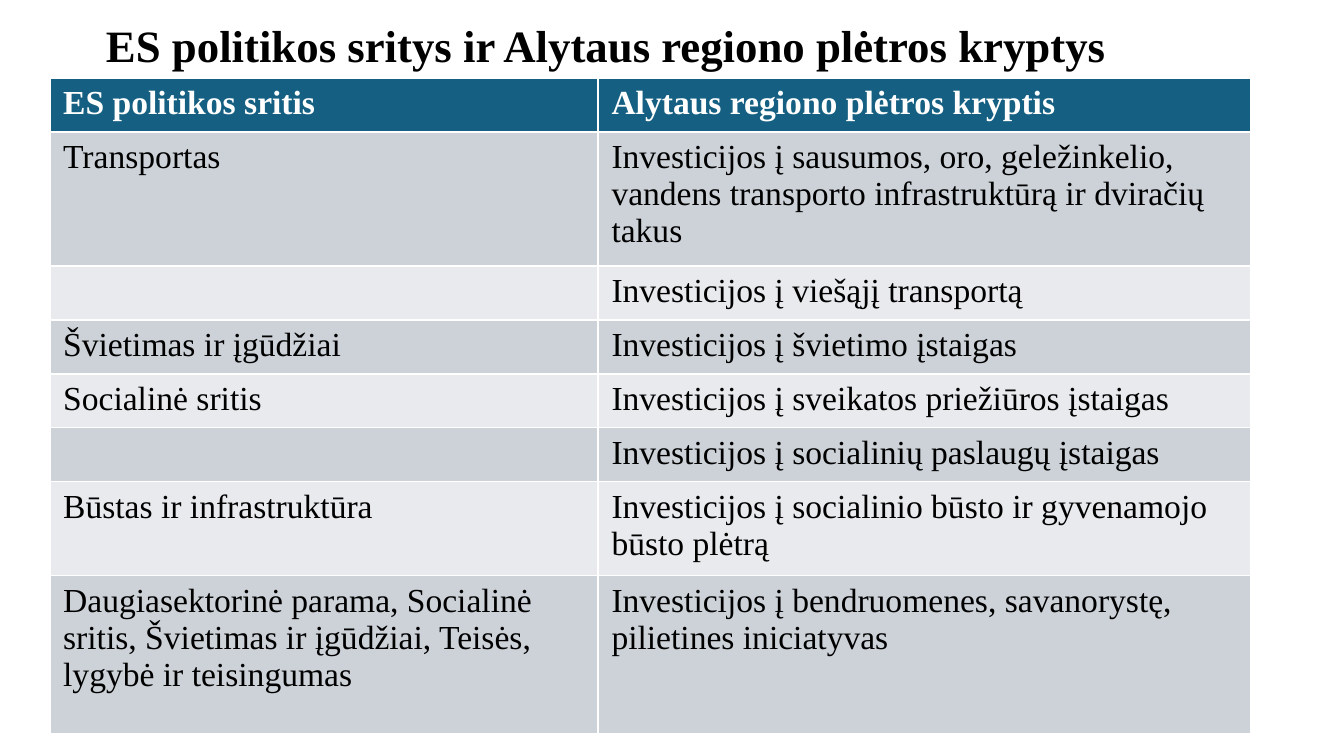
"""Build a slide with a table of EU policy areas and Alytus region development directions."""
from dataclasses import dataclass

from pptx import Presentation
from pptx.dml.color import RGBColor as Color
from pptx.enum.text import MSO_ANCHOR as Anchor
from pptx.util import Inches, Pt


@dataclass(frozen=True)
class Theme:
    font: str = "Times New Roman"
    title_size: int = 24
    table_size: int = 18
    ink: str = "000000"
    white: str = "FFFFFF"
    header: str = "156082"
    bands: tuple = ("E8EAED", "CCD2D8")


theme = Theme()


def style_font(font, size, color, bold):
    for name, value in {"name": theme.font, "size": Pt(size), "bold": bold}.items():
        setattr(font, name, value)
    font.color.rgb = Color.from_string(color)


deck = Presentation()
deck.slide_width = Inches(10)
deck.slide_height = deck.slide_width * 9 // 16
page = deck.slides.add_slide(deck.slide_layouts[6])

title = page.shapes.add_textbox(Inches(0.69), Inches(0.14), Inches(8.62), Inches(0.43))
title_frame = title.text_frame
title_frame.word_wrap = True
title_frame.vertical_anchor = Anchor.MIDDLE
para = title_frame.paragraphs[0]
para.line_spacing = 0.9
span = para.add_run()
span.text = "ES politikos sritys ir Alytaus regiono plėtros kryptys"
style_font(span.font, theme.title_size, theme.ink, True)

rows = [
    (0.39, "ES politikos sritis", "Alytaus regiono plėtros kryptis"),
    (0.97, "Transportas",
     "Investicijos į sausumos, oro, geležinkelio, vandens transporto infrastruktūrą ir dviračių takus"),
    (0.39, "", "Investicijos į viešąjį transportą"),
    (0.39, "Švietimas ir įgūdžiai", "Investicijos į švietimo įstaigas"),
    (0.39, "Socialinė sritis", "Investicijos į sveikatos priežiūros įstaigas"),
    (0.39, "", "Investicijos į socialinių paslaugų įstaigas"),
    (0.68, "Būstas ir infrastruktūra", "Investicijos į socialinio būsto ir gyvenamojo būsto plėtrą"),
    (1.18, "Daugiasektorinė parama, Socialinė sritis, Švietimas ir įgūdžiai, Teisės, lygybė ir teisingumas",
     "Investicijos į bendruomenes, savanorystę, pilietines iniciatyvas"),
]
table = page.shapes.add_table(
    len(rows), 2, Inches(0.37), Inches(0.58), Inches(8.94), Inches(4.75)).table
for column, width in zip(table.columns, (4.08, 4.86)):
    column.width = Inches(width)

for row_index, (height, *texts) in enumerate(rows):
    is_header = row_index == 0
    fill_color = theme.header if is_header else theme.bands[row_index % 2]
    text_color = theme.white if is_header else theme.ink
    table.rows[row_index].height = Inches(height)
    for column_index, text in enumerate(texts):
        cell = table.cell(row_index, column_index)
        cell.fill.solid()
        cell.fill.fore_color.rgb = Color.from_string(fill_color)
        if text:
            span = cell.text_frame.paragraphs[0].add_run()
            span.text = text
            style_font(span.font, theme.table_size, text_color, is_header)

deck.save("out.pptx")
